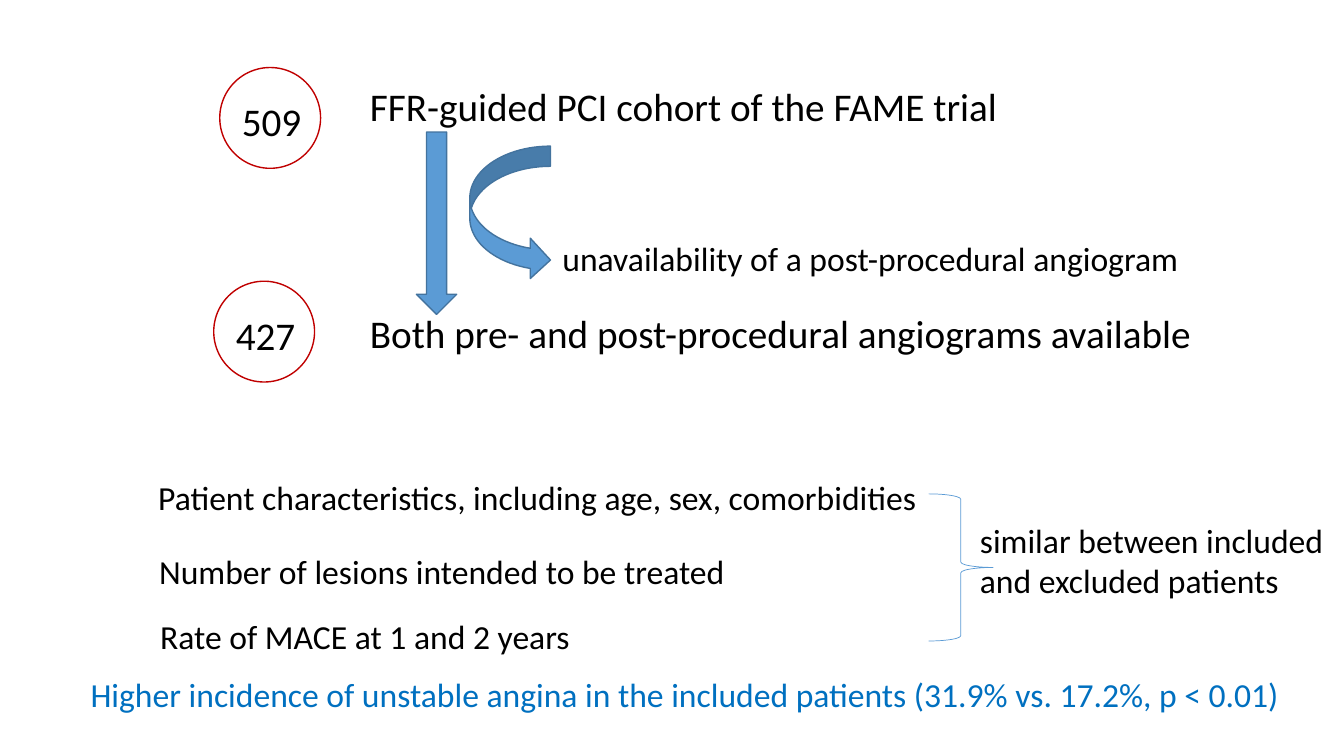
import pptx
import pptx.util
import pptx.dml.color
import pptx.enum.shapes
from dataclasses import dataclass

Inches = pptx.util.Inches
Pt = pptx.util.Pt
PRESET = pptx.enum.shapes.MSO_SHAPE


@dataclass(frozen=True)
class Theme:
    font: str = "Calibri"
    text: str = "000000"
    highlight: str = "0070C0"
    arrow: str = "5B9BD5"
    arrow_edge: str = "43739E"
    ring: str = "C00000"
    cohort_size: int = 28
    detail_size: int = 24
    outline: float = 1
    brace_outline: float = 0.5


class FlowSlide:
    def __init__(self, deck, theme):
        self.theme = theme
        blank_layout = deck.slide_layouts[6]
        self.shapes = deck.slides.add_slide(blank_layout).shapes

    def text(self, box, lines, size, color=None, wrap=True):
        frame = self.shapes.add_textbox(*map(Inches, box)).text_frame
        frame.word_wrap = wrap
        frame.text = "\n".join(lines)
        style = {"name": self.theme.font, "size": Pt(size)}
        for paragraph in frame.paragraphs:
            for key, value in style.items():
                setattr(paragraph.font, key, value)
            paragraph.font.color.rgb = pptx.dml.color.RGBColor.from_string(
                color or self.theme.text)

    def shape(self, preset, box, edge, fill=None, outline=None):
        """Draw a preset shape; without a fill it stays hollow."""
        figure = self.shapes.add_shape(preset, *map(Inches, box))
        figure.shadow.inherit = False
        if fill:
            figure.fill.solid()
            figure.fill.fore_color.rgb = pptx.dml.color.RGBColor.from_string(fill)
        else:
            figure.fill.background()
        figure.line.color.rgb = pptx.dml.color.RGBColor.from_string(edge)
        figure.line.width = Pt(outline or self.theme.outline)

    def patient_count(self, left, top, count):
        """Put a number of patients in a ring."""
        self.text((left + 0.12, top + 0.25, 0.8, 0.57), [count],
                  self.theme.cohort_size, wrap=False)
        self.shape(PRESET.OVAL, (left, top, 1, 1), self.theme.ring)


def main():
    deck = pptx.Presentation()
    deck.slide_width, deck.slide_height = Inches(13.33), Inches(7.5)
    theme = Theme()
    flow = FlowSlide(deck, theme)

    cohorts = [
        (0.77, "FFR-guided PCI cohort of the FAME trial"),
        (3.02, "Both pre- and post-procedural angiograms available"),
    ]
    for top, cohort in cohorts:
        flow.text((3.57, top, 8.38, 0.57), [cohort], theme.cohort_size)
    flow.text((5.48, 2.31, 6.57, 0.5),
              ["unavailability of a post-procedural angiogram"], theme.detail_size)

    arrows = [
        (PRESET.CURVED_RIGHT_ARROW, (4.66, 1.45, 0.8, 1.33)),
        (PRESET.DOWN_ARROW, (4.13, 1.31, 0.4, 1.81)),
    ]
    for preset, box in arrows:
        flow.shape(preset, box, theme.arrow_edge, theme.arrow)

    flow.patient_count(2.18, 0.67, "509")
    flow.patient_count(2.12, 2.79, "427")

    comparisons = [
        (1.47, 4.68, "Patient characteristics, including age, sex, comorbidities"),
        (1.48, 5.42, "Number of lesions intended to be treated"),
        (1.49, 6.06, "Rate of MACE at 1 and 2 years"),
    ]
    for left, top, comparison in comparisons:
        flow.text((left, top, 8.02, 0.5), [comparison], theme.detail_size)

    flow.shape(PRESET.RIGHT_BRACE, (9.21, 4.9, 0.64, 1.46), theme.arrow,
               outline=theme.brace_outline)
    flow.text((9.62, 5.11, 3.72, 0.91),
              ["similar between included", "and excluded patients"],
              theme.detail_size)
    flow.text((0.8, 6.64, 12.22, 0.5),
              ["Higher incidence of unstable angina in the included patients "
               "(31.9% vs. 17.2%, p < 0.01)"],
              theme.detail_size, theme.highlight)

    deck.save("out.pptx")


if __name__ == "__main__":
    main()
